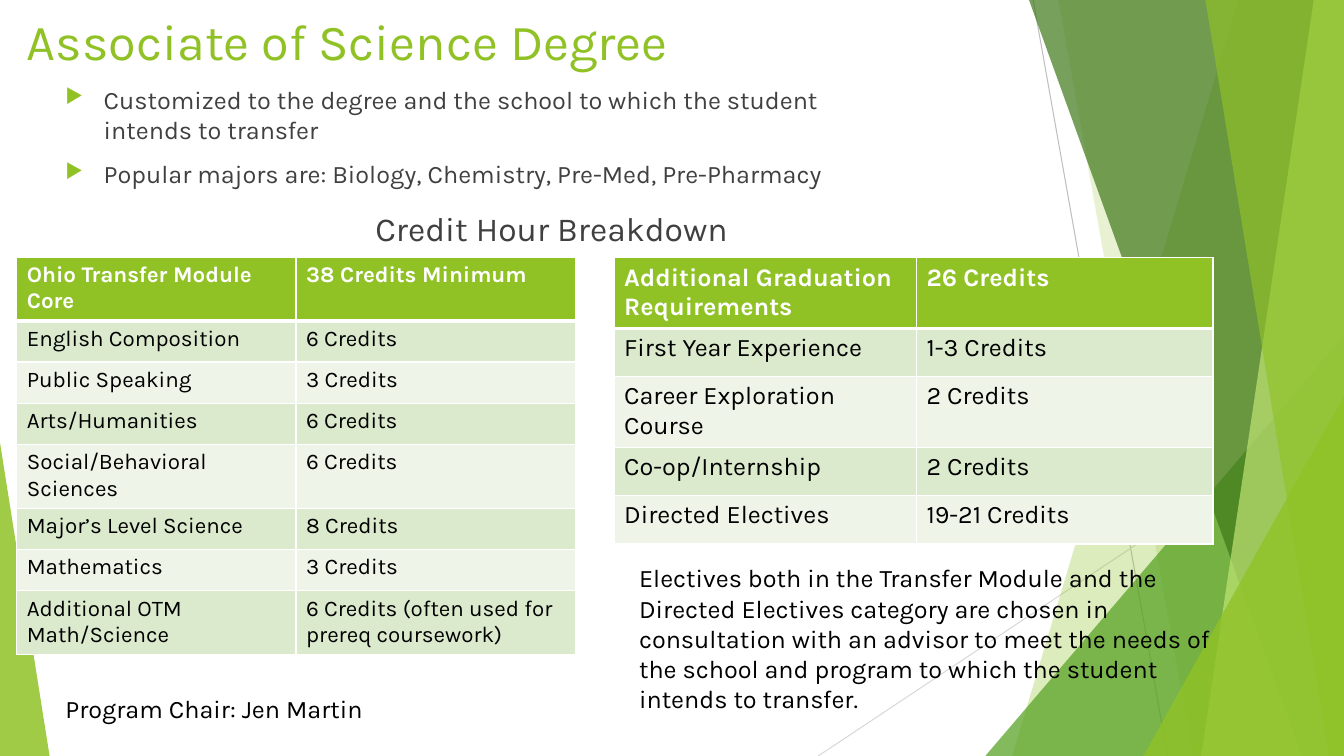
from lxml import etree
from pptx import Presentation
from pptx import util as u
from pptx.dml.color import RGBColor
from pptx.enum import shapes, text
from pptx.oxml import ns

GREEN = RGBColor(0x90, 0xC2, 0x26)
MID_GREEN = RGBColor(0x54, 0xA0, 0x21)
DARK_GREEN = RGBColor(0x3F, 0x78, 0x19)
PALE_GREEN = RGBColor(0xC0, 0xE4, 0x74)
BANDS = (RGBColor(0xEE, 0xF4, 0xE8), RGBColor(0xDB, 0xE9, 0xCD))
GREY = RGBColor(0x40, 0x40, 0x40)
LINE_GREY = RGBColor(0xBF, 0xBF, 0xBF)
LIGHT_GREY = RGBColor(0xD9, 0xD9, 0xD9)
WHITE = RGBColor(0xFF, 0xFF, 0xFF)
BLACK = RGBColor(0, 0, 0)

COLS, ROWS = 160, 90


def sub(parent, tag, **attrs):
    return etree.SubElement(parent, ns.qn(tag), {k: str(v) for k, v in attrs.items()})


class Deck:
    """Slide builder; every length is in cells of a 160 by 90 grid."""
    font = "Karla"

    def __init__(self):
        self.prs = Presentation()
        self.prs.slide_width = u.Inches(13.33)
        self.prs.slide_height = u.Inches(7.5)
        self.s = self.prs.slides.add_slide(self.prs.slide_layouts[5])

    def x(self, cols):
        return round(self.prs.slide_width * cols / COLS)

    def y(self, rows):
        return round(self.prs.slide_height * rows / ROWS)

    def box(self, left, top, width, height):
        return self.x(left), self.y(top), self.x(width), self.y(height)

    def run(self, p, words, size, color, bold=False):
        r = p.add_run()
        r.text = words
        r.font.name, r.font.size, r.font.bold = self.font, u.Pt(size), bold
        r.font.color.rgb = color

    def paint(self, sp, color, alpha):
        sp.shadow.inherit = False
        sp.line.fill.background()
        sp.fill.solid()
        sp.fill.fore_color.rgb = color
        clr = sp._element.spPr.find(".//" + ns.qn("a:srgbClr"))
        sub(clr, "a:alpha", val=alpha * 1000)

    def facet(self, top_x, bottom_x, color, alpha):
        """Full-height panel from a slanted left side to the slide's right edge."""
        fb = self.s.shapes.build_freeform(self.x(top_x), 0)
        fb.add_line_segments([(self.x(COLS), 0), (self.x(COLS), self.y(ROWS)),
                              (self.x(bottom_x), self.y(ROWS))], close=True)
        self.paint(fb.convert_to_shape(), color, alpha)

    def triangle(self, left, top, width, apex, color, alpha):
        """Triangle standing on the slide's bottom edge; apex is 0 (left) to 1 (right)."""
        sp = self.s.shapes.add_shape(shapes.MSO_SHAPE.ISOSCELES_TRIANGLE,
                                     *self.box(left, top, width, ROWS - top))
        sp.adjustments[0] = apex
        self.paint(sp, color, alpha)

    def line(self, x1, y1, x2, y2, color):
        cn = self.s.shapes.add_connector(shapes.MSO_CONNECTOR.STRAIGHT, self.x(x1),
                                         self.y(y1), self.x(x2), self.y(y2))
        cn.line.color.rgb, cn.line.width = color, u.Pt(0.75)
        sub(cn._element.spPr, "a:effectLst")

    def title(self, box, words):
        sp = self.s.shapes.title
        sp.left, sp.top, sp.width, sp.height = self.box(*box)
        tf = sp.text_frame
        tf.vertical_anchor = text.MSO_ANCHOR.TOP
        p = tf.paragraphs[0]
        p.alignment = text.PP_ALIGN.LEFT
        self.run(p, words, 36, GREEN)

    def textbox(self, box, paragraphs, size=18, color=BLACK, bullets=False,
                anchor=text.MSO_ANCHOR.TOP):
        tf = self.s.shapes.add_textbox(*self.box(*box)).text_frame
        tf.word_wrap = True
        tf.vertical_anchor = anchor
        for i, words in enumerate(paragraphs):
            p = tf.add_paragraph() if i else tf.paragraphs[0]
            if bullets:
                self.bullet(p)
            if i:
                p.space_before = u.Pt(10)
            self.run(p, words, size, color)

    def bullet(self, p):
        pPr = p._p.get_or_add_pPr()
        indent = u.Inches(0.38)
        pPr.set("marL", str(indent))
        pPr.set("indent", str(-indent))
        sub(sub(pPr, "a:buClr"), "a:srgbClr", val=GREEN)
        sub(pPr, "a:buSzPct", val=80000)
        sub(pPr, "a:buChar", char="▶")

    def borders(self, cell, top, bottom):
        tcPr = cell._tc.get_or_add_tcPr()
        for side, width in zip("LRTB", (1, 1, top, bottom)):
            ln = sub(tcPr, f"a:ln{side}", w=u.Pt(width))
            sub(sub(ln, "a:solidFill"), "a:srgbClr", val=WHITE)

    def table(self, left, top, widths, heights, rows, size):
        frame = self.s.shapes.add_table(len(rows), len(widths), *self.box(
            left, top, sum(widths), sum(heights)))
        tbl = frame.table
        for col, width in zip(tbl.columns, widths):
            col.width = self.x(width)
        for i, (row, height) in enumerate(zip(rows, heights)):
            tbl.rows[i].height = self.y(height)
            head = i == 0
            for j, words in enumerate(row):
                cell = tbl.cell(i, j)
                self.borders(cell, 3 if i == 1 else 1, 3 if head else 1)
                cell.fill.solid()
                cell.fill.fore_color.rgb = GREEN if head else BANDS[i % 2]
                self.run(cell.text_frame.paragraphs[0], words, size,
                         WHITE if head else BLACK, head)


CORE = [
    ("Ohio Transfer Module Core", "38 Credits Minimum"),
    ("English Composition", "6 Credits"),
    ("Public Speaking", "3 Credits"),
    ("Arts/Humanities", "6 Credits"),
    ("Social/Behavioral Sciences", "6 Credits"),
    ("Major’s Level Science", "8 Credits"),
    ("Mathematics", "3 Credits"),
    ("Additional OTM Math/Science", "6 Credits (often used for prereq coursework)"),
]
ADDITIONAL = [
    ("Additional Graduation Requirements", "26 Credits"),
    ("First Year Experience", "1-3 Credits"),
    ("Career Exploration Course", "2 Credits"),
    ("Co-op/Internship", "2 Credits"),
    ("Directed Electives", "19-21 Credits"),
]


def main():
    d = Deck()
    d.line(123, 0, 139, ROWS, LINE_GREY)
    d.line(COLS, 48.4, 97.4, ROWS, LIGHT_GREY)
    d.facet(147.4, 120.5, GREEN, 30)
    d.facet(126, 142, GREEN, 20)
    d.triangle(117.3, 40, 42.7, 1, MID_GREEN, 72)
    d.facet(122.5, 155, DARK_GREEN, 70)
    d.facet(156.4, 143, PALE_GREEN, 70)
    d.facet(143.5, 158.2, GREEN, 65)
    d.triangle(136.1, 47.2, 23.9, 1, GREEN, 80)
    d.triangle(0, 52.7, 5.9, 0, GREEN, 85)

    d.title((2, 0.6, 112.8, 17.3), "Associate of Science Degree")
    d.textbox((6.6, 9.4, 97.7, 15.8), [
        "Customized to the degree and the school to which the student intends to transfer",
        "Popular majors are: Biology, Chemistry, Pre-Med, Pre-Pharmacy",
    ], color=GREY, bullets=True)
    d.textbox((6.6, 82, 40.4, 4.8), ["Program Chair: Jen Martin"])
    d.textbox((43.5, 22.6, 55, 7.5), ["Credit Hour Breakdown"], 24, GREY,
              anchor=text.MSO_ANCHOR.BOTTOM)
    d.table(2, 30.6, [33.25] * 2, [4.9] * 7 + [7.6], CORE, 16)
    d.table(73.1, 30.7, [36, 35.3], [5.75] * 5, ADDITIONAL, 18)
    d.textbox((74.9, 66.4, 71.3, 19.4), [
        "Electives both in the Transfer Module and the Directed Electives category are "
        "chosen in consultation with an advisor to meet the needs of the school and "
        "program to which the student intends to transfer."])
    d.prs.save("out.pptx")


if __name__ == "__main__":
    main()
